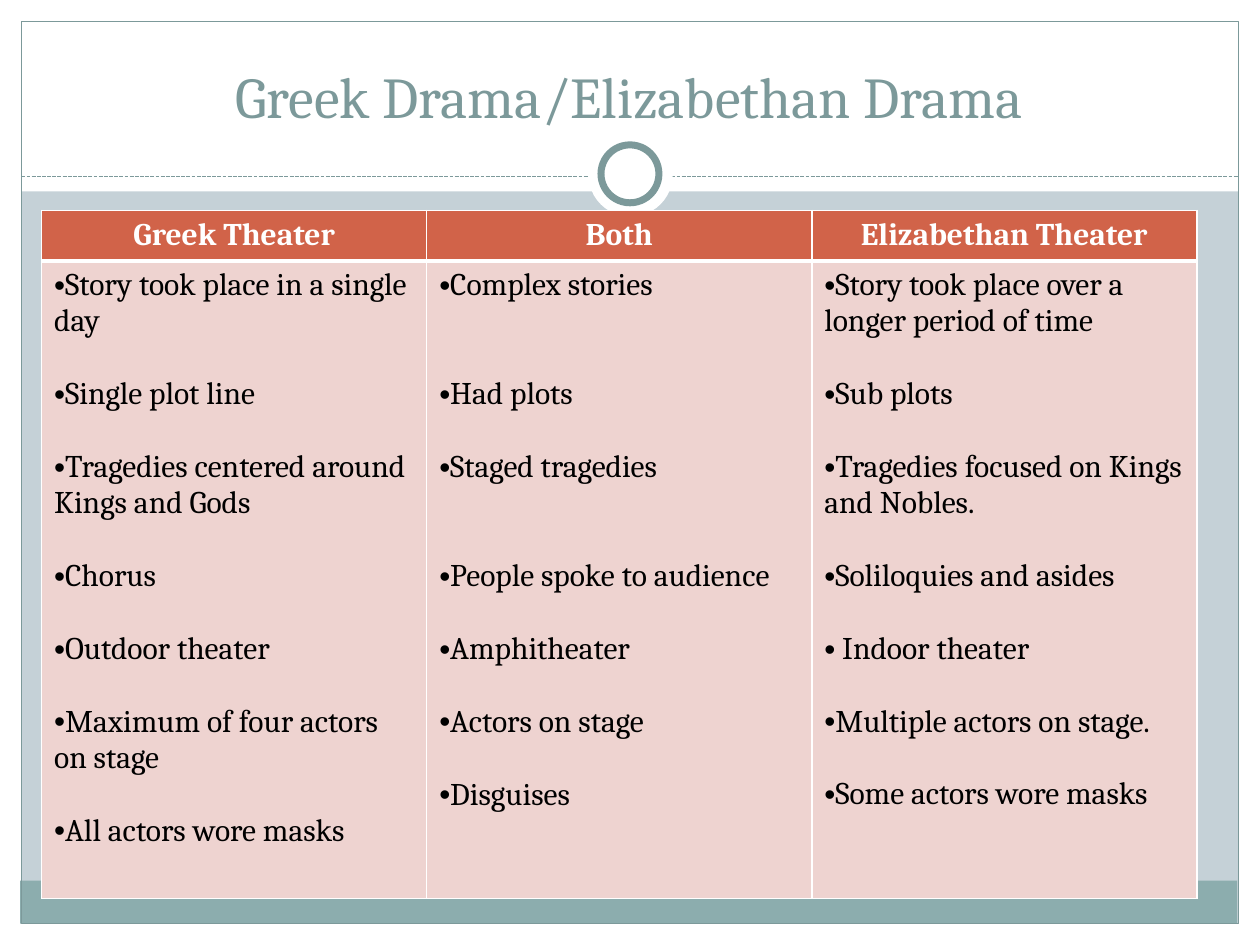
from typing import NamedTuple, Optional

from lxml.etree import SubElement
from pptx import Presentation
from pptx.dml.color import RGBColor
from pptx.enum.dml import MSO_LINE_DASH_STYLE as Dash
from pptx.enum.shapes import MSO_CONNECTOR, MSO_SHAPE as Shape
from pptx.enum.text import MSO_ANCHOR as Anchor, PP_ALIGN as Align
from pptx.oxml import parse_xml
from pptx.oxml.ns import nsdecls, qn
from pptx.util import Inches, Pt

FONT = "Cambria"
WHITE, TEAL, BAND, PALE = "FFFFFF", "7C999A", "8CADAE", "C5D1D7"
RUST, PINK, BLACK = "D16349", "EED3D0", "000000"
LINE_PITCH = 20.8  # points, one line of 18 pt text


class Block(NamedTuple):
    left: float
    top: float
    width: float
    height: float
    fill: Optional[str] = WHITE
    line: Optional[str] = None
    weight: float = 0.75
    kind: Shape = Shape.RECTANGLE


class Item(NamedTuple):
    text: str
    gap: int = 1  # blank lines above


class Column(NamedTuple):
    head: str
    items: list[Item]


FRAME = [
    Block(0, 7.33, 10, 0.17),
    Block(0, 0, 10, 1.52),
    Block(0, 0, 0.17, 7.5),
    Block(9.83, 0, 0.17, 7.5),
    Block(0.16, 6.99, 9.66, 0.34, BAND),
    Block(0.17, 0.17, 9.66, 7.16, None, TEAL),
]
RINGS = [
    Block(4.67, 1.05, 0.67, 0.67, kind=Shape.OVAL),
    Block(4.77, 1.15, 0.46, 0.46, WHITE, TEAL, 4, Shape.OVAL),
]
COLUMNS = [
    Column("Greek Theater", [
        Item("Story took place in a single day", 0),
        Item("Single plot line"),
        Item("Tragedies centered around Kings and Gods"),
        Item("Chorus"),
        Item("Outdoor theater"),
        Item("Maximum of four actors on stage"),
        Item("All actors wore masks"),
    ]),
    Column("Both", [
        Item("Complex stories", 0),
        Item("Had plots", 2),
        Item("Staged tragedies"),
        Item("People spoke to audience", 2),
        Item("Amphitheater"),
        Item("Actors on stage"),
        Item("Disguises"),
    ]),
    Column("Elizabethan Theater", [
        Item("Story took place over a longer period of time", 0),
        Item("Sub plots"),
        Item("Tragedies focused on Kings and Nobles."),
        Item("Soliloquies and asides"),
        Item(" Indoor theater"),
        Item("Multiple actors on stage."),
        Item("Some actors wore masks"),
    ]),
]


def rgb(value: str) -> RGBColor:
    return RGBColor.from_string(value)


def paint(fill, color: str) -> None:
    fill.solid()
    fill.fore_color.rgb = rgb(color)


def draw_block(s, b: Block) -> None:
    sp = s.shapes.add_shape(b.kind, Inches(b.left), Inches(b.top),
                            Inches(b.width), Inches(b.height))
    sp.shadow.inherit = False
    if b.fill:
        paint(sp.fill, b.fill)
    else:
        sp.fill.background()
    if b.line:
        paint(sp.line.fill, b.line)
        sp.line.width = Pt(b.weight)
    else:
        sp.line.fill.background()


def draw_divider(s, left: float, right: float, y: float) -> None:
    c = s.shapes.add_connector(MSO_CONNECTOR.STRAIGHT, Inches(left), Inches(y),
                               Inches(right), Inches(y))
    paint(c.line.fill, TEAL)
    c.line.width = Pt(0.75)
    c.line.dash_style = Dash.SQUARE_DOT
    SubElement(c._element.spPr, qn("a:effectLst"))


def add_run(p, text: str, size: float, color: str, bold: bool = False) -> None:
    r = p.add_run()
    r.text = text
    r.font.name, r.font.size, r.font.bold = FONT, Pt(size), bold
    r.font.color.rgb = rgb(color)


def style_cell(cell, fill: str, top: float, bottom: float) -> None:
    paint(cell.fill, fill)
    tc_pr = cell._tc.get_or_add_tcPr()
    sides = {"L": 1, "R": 1, "T": top, "B": bottom}
    for i, (side, weight) in enumerate(sides.items()):
        tc_pr.insert(i, parse_xml(
            f'<a:ln{side} {nsdecls("a")} w="{Pt(weight)}"><a:solidFill>'
            f'<a:srgbClr val="{WHITE}"/></a:solidFill></a:ln{side}>'))


def add_bullet(p, item: Item) -> None:
    p.space_before = Pt(LINE_PITCH * item.gap)
    p_pr = p._p.get_or_add_pPr()
    p_pr.set("marL", "0")
    p_pr.set("indent", "0")
    SubElement(p_pr, qn("a:buFont")).set("typeface", "Arial")
    SubElement(p_pr, qn("a:buChar")).set("char", "•")
    add_run(p, item.text, 18, BLACK)


def draw_table(s, columns: list[Column]) -> None:
    table = s.shapes.add_table(2, len(columns), Inches(0.33), Inches(1.67),
                               Inches(9.17), Inches(5.41)).table
    table.rows[0].height = Inches(0.35)
    table.rows[1].height = Inches(5.06)
    for i, col in enumerate(columns):
        head, body = table.cell(0, i), table.cell(1, i)
        style_cell(head, RUST, 1, 3)
        style_cell(body, PINK, 3, 1)
        p = head.text_frame.paragraphs[0]
        p.alignment = Align.CENTER
        add_run(p, col.head, 18, WHITE, True)
        tf = body.text_frame
        for n, item in enumerate(col.items):
            add_bullet(tf.add_paragraph() if n else tf.paragraphs[0], item)


def draw_title(s, text: str) -> None:
    tf = s.shapes.add_textbox(Inches(0.33), Inches(0.25),
                              Inches(9.33), Inches(0.83)).text_frame
    tf.word_wrap = True
    tf.vertical_anchor = Anchor.BOTTOM
    p = tf.paragraphs[0]
    p.alignment = Align.CENTER
    add_run(p, text, 33, TEAL)


def main() -> None:
    prs = Presentation()
    prs.slide_width, prs.slide_height = Inches(10), Inches(7.5)
    s = prs.slides.add_slide(prs.slide_layouts[6])
    paint(s.background.fill, PALE)

    # Frame, divider and ring
    for block in FRAME:
        draw_block(s, block)
    draw_divider(s, 0.17, 9.83, 1.4)
    for ring in RINGS:
        draw_block(s, ring)

    # Title and comparison table
    draw_title(s, "Greek Drama/Elizabethan Drama")
    draw_table(s, COLUMNS)
    prs.save("out.pptx")


if __name__ == "__main__":
    main()
